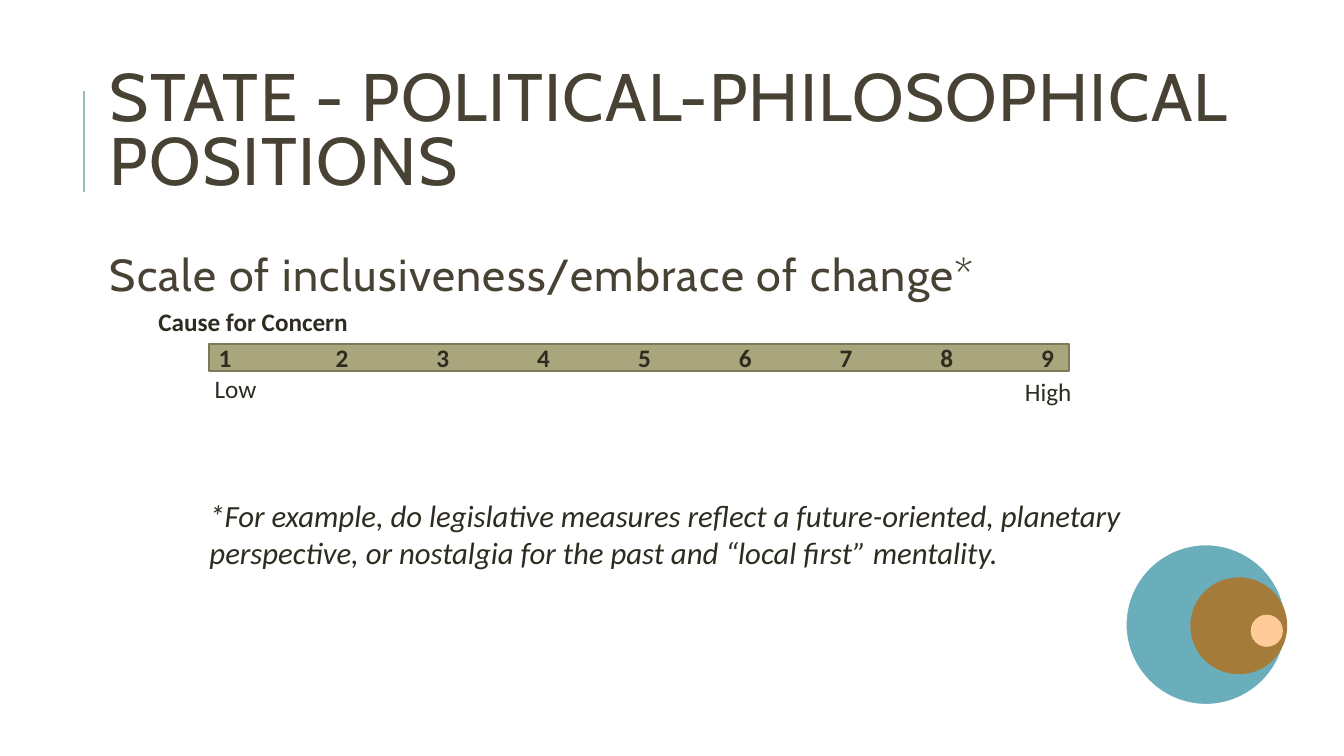
import dataclasses

import pptx
import pptx.dml.color
import pptx.enum.shapes
import pptx.enum.text
import pptx.oxml
import pptx.oxml.ns
import pptx.util

Cm = pptx.util.Cm
Pt = pptx.util.Pt
RGB = pptx.dml.color.RGBColor.from_string
SHAPE = pptx.enum.shapes.MSO_SHAPE
ANCHOR = pptx.enum.text.MSO_ANCHOR


@dataclasses.dataclass
class Theme:
    heading_font: str = "Cabin"
    body_font: str = "Calibri"
    heading: str = "474233"
    ink: str = "2E2B21"
    rule: str = "9CBEBD"
    bar: str = "A9A57C"
    bar_edge: str = "7D7A5C"
    teal: str = "6AAEBC"
    brown: str = "A47B38"
    peach: str = "FFCC99"
    white: str = "FFFFFF"
    title_size: int = 48
    subtitle_size: int = 32
    label_size: int = 18
    note_size: int = 22
    edge: float = 1.25
    rule_width: float = 1.5


def apply(target, formats):
    for name, value in formats.items():
        setattr(target, name, value)


class Deck:
    def __init__(self, theme):
        self.theme = theme
        self.prs = pptx.Presentation()
        apply(self.prs, {"slide_width": Cm(33.87), "slide_height": Cm(19.05)})
        self.s = None

    def add_slide(self):
        self.s = self.prs.slides.add_slide(self.prs.slide_layouts[5])

    def place(self, sp, box):
        apply(sp, dict(zip(("left", "top", "width", "height"), map(Cm, box))))

    def fill_text(self, sp, text, font, paragraph=None, inset=None, tabs=(),
                  anchor=ANCHOR.MIDDLE, spacing=None):
        tf = sp.text_frame
        apply(tf, {"word_wrap": True, "vertical_anchor": anchor,
                   "auto_size": pptx.enum.text.MSO_AUTO_SIZE.NONE})
        if inset is not None:
            sides = ("margin_left", "margin_top", "margin_right", "margin_bottom")
            apply(tf, dict.fromkeys(sides, Cm(inset)))
        p = tf.paragraphs[0]
        apply(p, {"alignment": pptx.enum.text.PP_ALIGN.LEFT, **(paragraph or {})})
        if tabs:
            p_pr = p._p.get_or_add_pPr()
            stops = p_pr.makeelement(pptx.oxml.ns.qn("a:tabLst"), {})
            for position in tabs:
                stops.append(stops.makeelement(pptx.oxml.ns.qn("a:tab"),
                                               {"pos": str(Cm(position)), "algn": "l"}))
            p_pr.append(stops)
        r = p.add_run()
        r.text = text
        color = font.pop("color")
        apply(r.font, font)
        r.font.color.rgb = RGB(color)
        if spacing:
            r._r.get_or_add_rPr().set("spc", str(spacing * 100))

    def heading(self, sp, box, text, size):
        t = self.theme
        self.place(sp, box)
        self.fill_text(sp, text,
                       {"name": t.heading_font, "size": Pt(size), "color": t.heading},
                       {"line_spacing": 0.8}, spacing=1)

    def title(self, box, text):
        self.heading(self.s.shapes.title, box, text, self.theme.title_size)

    def subtitle(self, box, text):
        sp = self.s.shapes.add_textbox(*map(Cm, box))
        self.heading(sp, box, text, self.theme.subtitle_size)

    def text(self, box, text, size, bold=False, italic=False, **layout):
        t = self.theme
        sp = self.s.shapes.add_textbox(*map(Cm, box))
        self.fill_text(sp, text, {"name": t.body_font, "size": Pt(size), "bold": bold,
                                  "italic": italic, "color": t.ink}, **layout)

    def label(self, box, text, bold=False):
        self.text(box, text, self.theme.label_size, bold, inset=0.13,
                  paragraph={"line_spacing": 0.9, "space_after": Pt(2)})

    def shape(self, kind, box, fill, edge=None):
        sp = self.s.shapes.add_shape(kind, *map(Cm, box))
        sp.shadow.inherit = False
        sp.fill.solid()
        sp.fill.fore_color.rgb = RGB(fill)
        if edge:
            sp.line.color.rgb = RGB(edge)
            sp.line.width = Pt(self.theme.edge)
        else:
            sp.line.fill.background()

    def rule(self, x, top, bottom):
        line = self.s.shapes.add_connector(
            pptx.enum.shapes.MSO_CONNECTOR.STRAIGHT, *map(Cm, (x, bottom, x, top)))
        line.line.color.rgb = RGB(self.theme.rule)
        line.line.width = Pt(self.theme.rule_width)
        sp_pr = line._element.spPr
        sp_pr.append(sp_pr.makeelement(pptx.oxml.ns.qn("a:effectLst"), {}))


def main():
    theme = Theme()
    deck = Deck(theme)
    deck.add_slide()
    deck.rule(2.11, 2.29, 4.83)
    deck.title((2.51, 2.46, 29, 1.85), "STATE - POLITICAL-PHILOSOPHICAL POSITIONS")
    deck.subtitle((2.51, 6.12, 29, 1.8), "Scale of inclusiveness/embrace of change*")
    deck.label((3.86, 7.65, 5.54, 1.02), "Cause for Concern", bold=True)

    deck.shape(SHAPE.RECTANGLE, (5.26, 8.66, 21.69, 0.69), theme.bar, theme.bar_edge)
    first_tab, step = 2.95, 2.54
    deck.text((5.26, 8.51, 24.71, 1.02), "\t".join(map(str, range(1, 10))),
              theme.label_size, bold=True,
              tabs=[first_tab + step * i for i in range(8)])
    for left, top, text in ((5.28, 9.32, "Low"), (25.7, 9.4, "High")):
        deck.label((left, top, 5.05, 1.02), text)

    for left, top, size, fill, edge in (
            (28.37, 13.72, 4.04, theme.teal, theme.white),
            (30, 14.55, 2.44, theme.brown, None),
            (31.52, 15.49, 0.81, theme.peach, None)):
        deck.shape(SHAPE.OVAL, (left, top, size, size), fill, edge)

    deck.text((5.03, 12.4, 24.16, 2.13),
              "*For example, do legislative measures reflect a future-oriented, planetary "
              "perspective, or nostalgia for the past and “local first” mentality.",
              theme.note_size, italic=True, anchor=ANCHOR.TOP)
    deck.prs.save("out.pptx")


if __name__ == "__main__":
    main()
